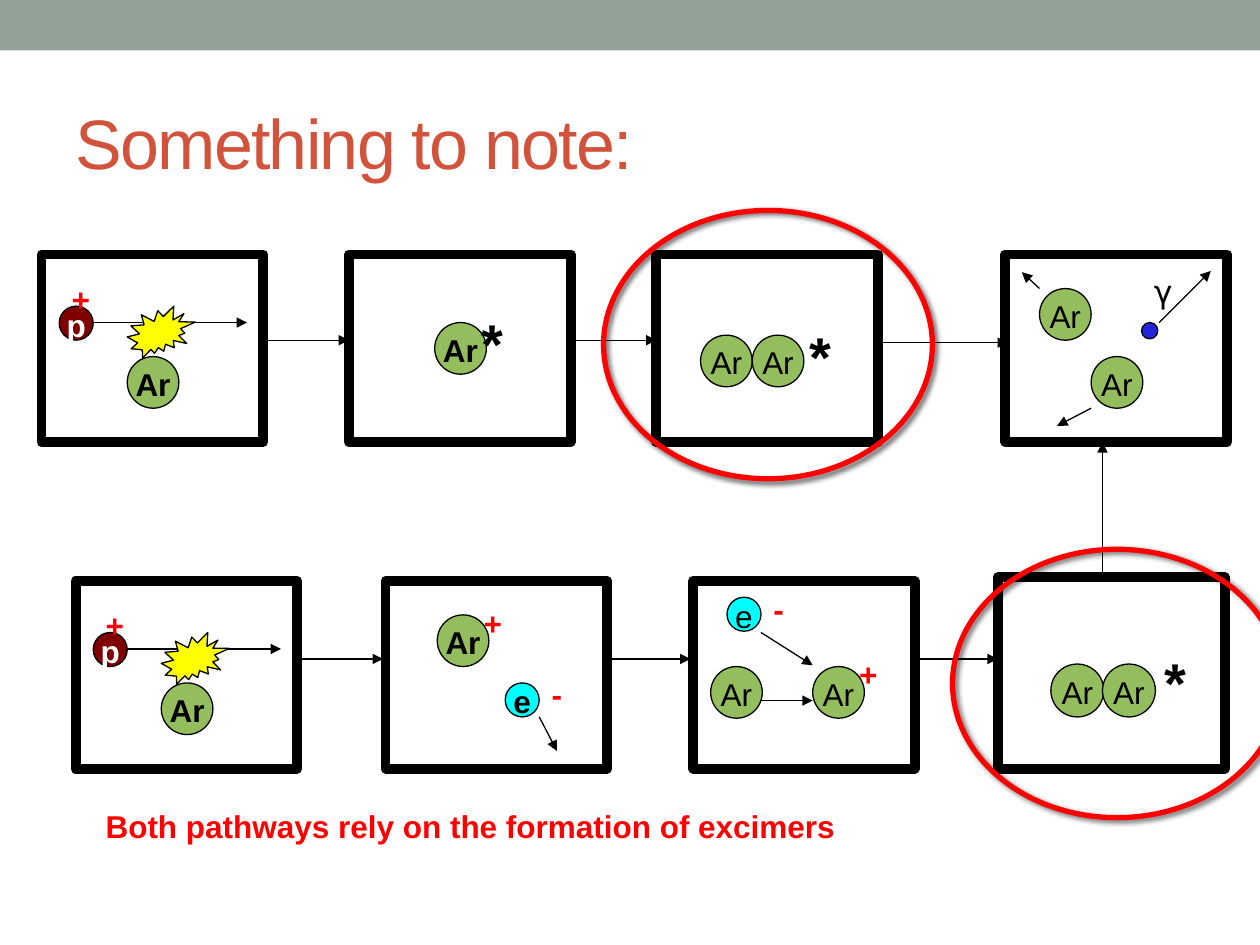
from dataclasses import dataclass

from lxml.etree import SubElement
from pptx import Presentation
from pptx.dml.color import RGBColor
from pptx.enum.shapes import MSO_CONNECTOR, MSO_SHAPE
from pptx.enum.text import MSO_ANCHOR, PP_ALIGN
from pptx.oxml.ns import qn
from pptx.util import Inches, Pt

HUES = {
    "band": "93A299", "title": "D2533C", "white": "FFFFFF", "black": "000000",
    "argon": "94BD5E", "proton": "800000", "cyan": "00FFFF",
    "flash": "FFFF00", "photon": "2323DC", "red": "FF0000",
}


@dataclass
class Box:
    x: float
    y: float
    w: float = 1.76
    h: float = 1.49


@dataclass
class Atom:
    x: float
    y: float
    word: str = "Ar"
    bold: bool = False
    size: float = 0.41
    fill: str = "argon"
    ink: str = "black"


@dataclass
class Arrow:
    x: float
    y: float
    to_x: float
    to_y: float


@dataclass
class Tag:
    x: float
    y: float
    word: str
    size: int = 18
    ink: str = "red"
    font: str = "Arial"
    bold: bool = True
    w: float = 0.68
    h: float = 0.36
    top: float = 0.07


hits = [Box(0.33, 2.02), Box(0.6, 4.61)]
boxes = hits + [
    Box(2.77, 2.02), Box(5.21, 2.02), Box(7.98, 2.02),
    Box(3.06, 4.61), Box(5.5, 4.61), Box(7.92, 4.58, 1.8, 1.52),
]
rings = [Box(4.79, 1.67, 2.61, 2.13), Box(7.56, 4.36, 2.61, 2.13)]
arrows = [
    Arrow(2.09, 2.7, 2.77, 2.7), Arrow(4.53, 2.7, 5.21, 2.7),
    Arrow(6.97, 2.72, 8, 2.72), Arrow(8.75, 4.58, 8.75, 3.51),
    Arrow(2.36, 5.23, 3.04, 5.23), Arrow(4.79, 5.23, 5.48, 5.23),
    Arrow(7.23, 5.23, 7.92, 5.23),
    Arrow(8.25, 2.29, 8.11, 2.16), Arrow(8.66, 3.24, 8.39, 3.38),
    Arrow(9.2, 2.56, 9.61, 2.15), Arrow(4.28, 5.69, 4.42, 5.96),
    Arrow(6.04, 5.56, 6.45, 5.56), Arrow(6.04, 5.02, 6.45, 5.28),
]
atoms = [
    Atom(3.45, 2.56, bold=True), Atom(3.47, 4.88, bold=True),
    Atom(5.56, 2.66), Atom(5.97, 2.66),
    Atom(8.34, 5.27, size=0.42), Atom(8.75, 5.27, size=0.42),
    Atom(8.25, 2.29), Atom(8.66, 2.83), Atom(5.64, 5.29), Atom(6.45, 5.29),
    Atom(4.01, 5.42, "e", True, 0.27, "cyan"),
    Atom(5.77, 4.74, "e", False, 0.27, "cyan"),
    Atom(9.06, 2.56, "", False, 0.13, "photon"),
]
tags = [
    Tag(3.74, 4.72, "+"), Tag(4.28, 5.29, "-"),
    Tag(6.72, 5.13, "+"), Tag(6.04, 4.61, "-"),
    Tag(9.06, 2.16, "γ", 18, "black", "DejaVu Sans", False, h=0.05, top=0.05),
    Tag(0.74, 6.36, "Both pathways rely on the formation of excimers",
        w=6.84, h=0.4, top=0.05),
] + [Tag(x, y, "*", 32, "black", h=0.53, top=0.08)
     for x, y in ((3.72, 2.37), (6.33, 2.47), (9.14, 5.06))]
flares = []
for hit in hits:
    x, y = hit.x, hit.y
    arrows.append(Arrow(x + 0.27, y + 0.54, x + 1.63, y + 0.54))
    atoms += [Atom(x + 0.68, y + 0.81, bold=True),
              Atom(x + 0.14, y + 0.41, "p", True, 0.27, "proton", "white")]
    flares.append(Box(x + 0.68, y + 0.41, 0.54, 0.41))
    tags.append(Tag(x + 0.14, y + 0.13, "+"))


def hue(name: str) -> RGBColor:
    return RGBColor.from_string(HUES[name])


def add_form(slide, kind, box: Box, fill=None, line="black", width=0.75):
    form = slide.shapes.add_shape(
        kind, Inches(box.x), Inches(box.y), Inches(box.w), Inches(box.h))
    form.shadow.inherit = False
    if fill:
        form.fill.solid()
        form.fill.fore_color.rgb = hue(fill)
    else:
        form.fill.background()
    if line:
        form.line.color.rgb = hue(line)
        form.line.width = Pt(width)
    else:
        form.line.fill.background()
    return form


def write(frame, word: str, size: int, ink: str, bold: bool,
          font="Arial", top=0.07):
    frame.margin_left = frame.margin_right = Inches(0.1)
    frame.margin_top, frame.margin_bottom = Inches(top), Inches(0.05)
    para = frame.paragraphs[0]
    para.text = word
    para.font.name, para.font.size = font, Pt(size)
    para.font.bold, para.font.color.rgb = bold, hue(ink)
    return para


def add_atom(slide, atom: Atom) -> None:
    box = Box(atom.x, atom.y, atom.size, atom.size)
    form = add_form(slide, MSO_SHAPE.OVAL, box, atom.fill)
    if atom.word:
        frame = form.text_frame
        frame.word_wrap = False
        frame.vertical_anchor = MSO_ANCHOR.MIDDLE
        para = write(frame, atom.word, 18, atom.ink, atom.bold)
        para.alignment = PP_ALIGN.CENTER


def add_arrow(slide, arrow: Arrow) -> None:
    link = slide.shapes.add_connector(
        MSO_CONNECTOR.STRAIGHT, Inches(arrow.x), Inches(arrow.y),
        Inches(arrow.to_x), Inches(arrow.to_y))
    link.line.color.rgb = hue("black")
    link.line.width = Pt(0.75)
    SubElement(link.line._get_or_add_ln(), qn("a:tailEnd"), type="triangle")
    SubElement(link._element.spPr, qn("a:effectLst"))


def add_tag(slide, tag: Tag) -> None:
    frame = slide.shapes.add_textbox(
        Inches(tag.x), Inches(tag.y), Inches(tag.w), Inches(tag.h)).text_frame
    frame.word_wrap = True
    write(frame, tag.word, tag.size, tag.ink, tag.bold, tag.font, tag.top)


def add_ring(slide, box: Box) -> None:
    ring = add_form(slide, MSO_SHAPE.OVAL, box, None, "red", 3)
    glow = SubElement(
        ring._element.spPr.find(qn("a:effectLst")), qn("a:outerShdw"),
        blurRad=str(Pt(3)), dist=str(Pt(2)), dir="2700000", rotWithShape="0")
    tint = SubElement(glow, qn("a:srgbClr"), val=HUES["black"])
    SubElement(tint, qn("a:alpha"), val="60000")


def add_title(slide, word: str) -> None:
    title = slide.shapes.title
    title.left, title.top = Inches(0.5), Inches(0.58)
    title.width, title.height = Inches(9), Inches(1.08)
    title.text_frame.vertical_anchor = MSO_ANCHOR.MIDDLE
    para = write(title.text_frame, word, 40, "title", False, top=0.05)
    para.alignment = PP_ALIGN.LEFT
    para.runs[0].font._element.set("spc", "-100")


def main() -> None:
    deck = Presentation()
    deck.slide_width, deck.slide_height = Inches(10), Inches(7.5)
    slide = deck.slides.add_slide(deck.slide_layouts[5])
    add_form(slide, MSO_SHAPE.RECTANGLE, Box(0, 0, 10, 0.4), "band", None)
    add_title(slide, "Something to note:")
    for box in boxes:
        add_form(slide, MSO_SHAPE.RECTANGLE, box, "white", width=5.67)
    for arrow in arrows:
        add_arrow(slide, arrow)
    for atom in atoms:
        add_atom(slide, atom)
    for flare in flares:
        add_form(slide, MSO_SHAPE.EXPLOSION2, flare, "flash")
    for tag in tags:
        add_tag(slide, tag)
    for ring in rings:
        add_ring(slide, ring)
    deck.save("out.pptx")


if __name__ == "__main__":
    main()
